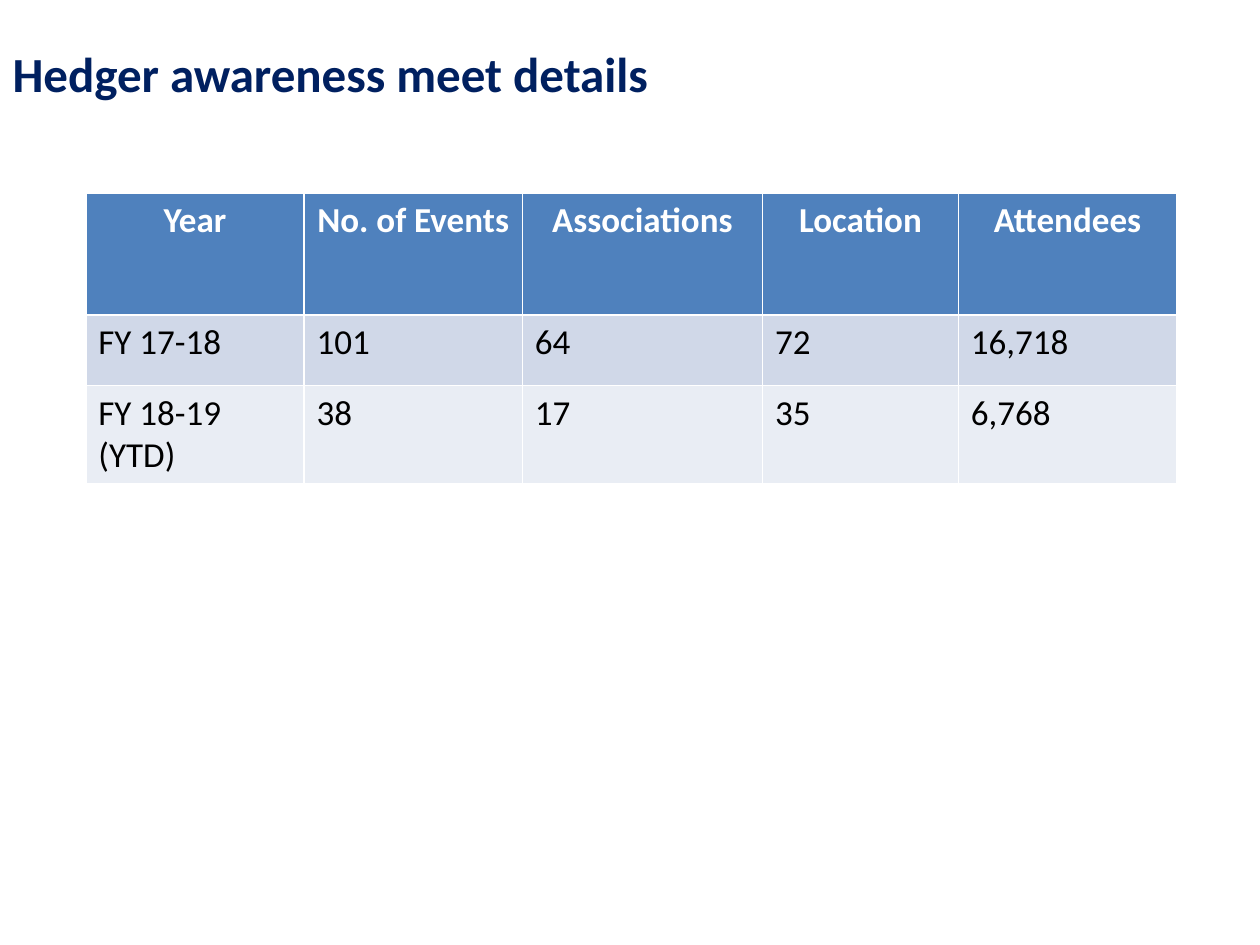
from pptx import Presentation
from pptx.dml.color import RGBColor
from pptx.enum.text import MSO_ANCHOR, PP_ALIGN
from pptx.util import Cm, Pt

LEFT, CENTER = PP_ALIGN.LEFT, PP_ALIGN.CENTER
MIDDLE = MSO_ANCHOR.MIDDLE

# Content
TITLE = "Hedger awareness meet details"
ROWS = [
    ("Year", "No. of Events", "Associations", "Location", "Attendees"),
    ("FY 17-18", "101", "64", "72", "16,718"),
    ("FY 18-19 (YTD)", "38", "17", "35", "6,768"),
]

# Sizes in cm
WIDTHS = (4.4, 4.4, 4.84, 3.95, 4.4)
HEIGHTS = (2.46, 1.42, 1.42)

THEME = {
    "font": "Calibri",
    "title": ("002060", 28),
    "head": ("FFFFFF", 20),
    "body": ("000000", 20),
    "fills": ("4F81BD", "D0D8E8", "E9EDF4"),
}


def style(par, role, bold, align):
    color, size = THEME[role]
    par.alignment = align
    for run in par.runs:
        font = run.font
        font.name = THEME["font"]
        font.size = Pt(size)
        font.bold = bold
        font.color.rgb = RGBColor.from_string(color)


deck = Presentation()
deck.slide_width, deck.slide_height = Cm(25.4), Cm(19.05)
slide = deck.slides.add_slide(deck.slide_layouts[5])

# Title
title = slide.shapes.title
title.left, title.top = Cm(0), Cm(0.76)
title.width, title.height = Cm(18.4), Cm(1.4)
title.text_frame.text = TITLE
title.text_frame.vertical_anchor = MIDDLE
style(title.text_frame.paragraphs[0], "title", True, LEFT)

# Table: the default style draws the white cell borders
table = slide.shapes.add_table(
    len(ROWS), len(WIDTHS), Cm(1.73), Cm(3.89), Cm(sum(WIDTHS)), Cm(sum(HEIGHTS))
).table
for col, width in zip(table.columns, WIDTHS):
    col.width = Cm(width)

for r, (texts, height) in enumerate(zip(ROWS, HEIGHTS)):
    table.rows[r].height = Cm(height)
    head = r == 0
    for c, text in enumerate(texts):
        cell = table.cell(r, c)
        cell.fill.solid()
        cell.fill.fore_color.rgb = RGBColor.from_string(THEME["fills"][r])
        cell.text_frame.text = text
        style(cell.text_frame.paragraphs[0], "head" if head else "body",
              head, CENTER if head else LEFT)

deck.save("out.pptx")
